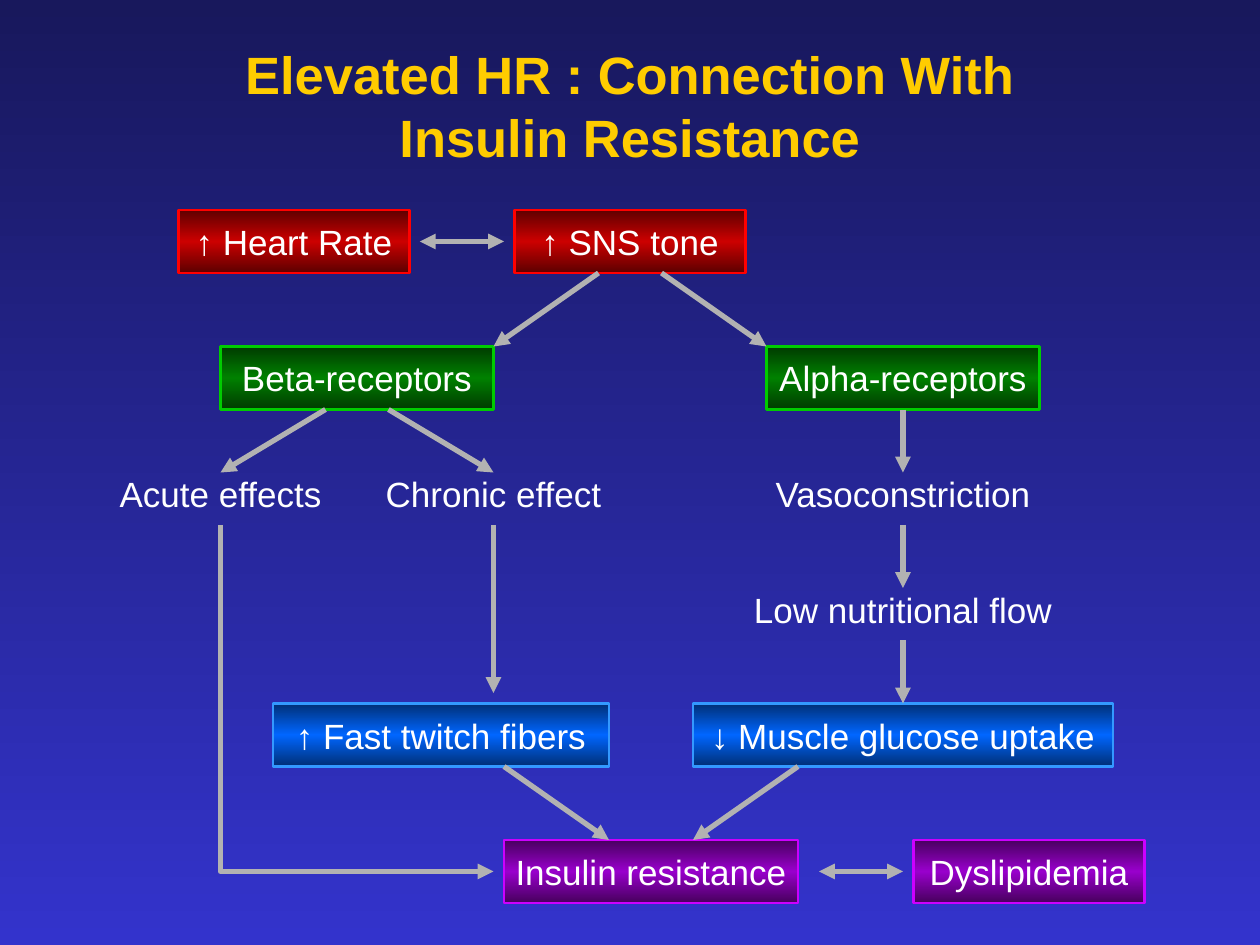
from copy import deepcopy
from typing import NamedTuple, Optional

from lxml import etree
from pptx import Presentation
from pptx import util as u
from pptx.dml.color import RGBColor
from pptx.enum import shapes, text
from pptx.oxml.ns import qn

UNIT_CM = 2.54 / 12

WHITE = RGBColor(0xFF, 0xFF, 0xFF)
BLACK = RGBColor(0x00, 0x00, 0x00)
GOLD = RGBColor(0xFF, 0xCC, 0x00)
GREY = RGBColor(0xB2, 0xB2, 0xB2)
NIGHT = RGBColor(0x18, 0x18, 0x5C)
INDIGO = RGBColor(0x33, 0x33, 0xCC)


class Palette(NamedTuple):
    edge: RGBColor
    middle: RGBColor
    border: RGBColor


RED = Palette(RGBColor(0x5E, 0x00, 0x00), RGBColor(0xCC, 0x00, 0x00), RGBColor(0xFF, 0x00, 0x00))
GREEN = Palette(RGBColor(0x00, 0x3B, 0x00), RGBColor(0x00, 0x80, 0x00), RGBColor(0x00, 0xCC, 0x00))
BLUE = Palette(RGBColor(0x00, 0x2F, 0x76), RGBColor(0x00, 0x66, 0xFF), RGBColor(0x33, 0x99, 0xFF))
PURPLE = Palette(RGBColor(0x47, 0x00, 0x5E), RGBColor(0x99, 0x00, 0xCC), RGBColor(0xCC, 0x00, 0xFF))


class Node(NamedTuple):
    label: str
    left: int
    top: int
    width: int
    height: int = 6
    palette: Optional[Palette] = None


class Arrow(NamedTuple):
    start: tuple
    end: tuple
    two_way: bool = False


NODES = [
    Node("↑ Heart Rate", 17, 20, 22, palette=RED),
    Node("↑ SNS tone", 49, 20, 22, palette=RED),
    Node("Beta-receptors", 21, 33, 26, palette=GREEN),
    Node("Alpha-receptors", 73, 33, 26, palette=GREEN),
    Node("Acute effects", 10, 45, 22, 4),
    Node("Chronic effect", 36, 45, 22, 4),
    Node("Vasoconstriction", 73, 45, 26, 4),
    Node("Low nutritional flow", 73, 56, 26, 4),
    Node("↑ Fast twitch fibers", 26, 67, 32, palette=BLUE),
    Node("↓ Muscle glucose uptake", 66, 67, 40, palette=BLUE),
    Node("Insulin resistance", 48, 80, 28, palette=PURPLE),
    Node("Dyslipidemia", 87, 80, 22, palette=PURPLE),
]

ARROWS = [
    Arrow((40, 23), (48, 23), two_way=True),
    Arrow((57, 26), (47, 33)),
    Arrow((63, 26), (73, 33)),
    Arrow((86, 39), (86, 45)),
    Arrow((86, 50), (86, 56)),
    Arrow((86, 61), (86, 67)),
    Arrow((48, 73), (58, 80)),
    Arrow((76, 73), (66, 80)),
    Arrow((78, 83), (86, 83), two_way=True),
    Arrow((47, 50), (47, 66)),
    Arrow((31, 39), (21, 45)),
    Arrow((37, 39), (47, 45)),
]

ACUTE_PATH = [(21, 50), (21, 83), (47, 83)]

TITLE_FONT = {"name": "Arial", "size": u.Pt(30), "bold": True}
LABEL_FONT = {"name": "Arial", "size": u.Pt(20), "bold": False}
TITLE_FRAME = {
    "word_wrap": True,
    "auto_size": text.MSO_AUTO_SIZE.NONE,
    "vertical_anchor": text.MSO_ANCHOR.MIDDLE,
}
LABEL_FRAME = {**TITLE_FRAME, "word_wrap": False}


def grid(*units: int) -> list:
    return [u.Cm(unit * UNIT_CM) for unit in units]


def apply(target, values: dict) -> None:
    for name, value in values.items():
        setattr(target, name, value)


def set_text(shape, words: str, frame: dict, font: dict, color: RGBColor):
    apply(shape.text_frame, frame)
    paragraph = shape.text_frame.paragraphs[0]
    paragraph.alignment = text.PP_ALIGN.CENTER
    run = paragraph.add_run()
    run.text = words
    apply(run.font, font)
    run.font.color.rgb = color
    return run


def set_gradient(fill, element, colors: list) -> None:
    fill.gradient()
    fill.gradient_angle = 270
    stop_list = next(element.iter(qn("a:gsLst")))
    while len(stop_list) < len(colors):
        stop_list.append(deepcopy(stop_list[0]))
    for index, (stop, color) in enumerate(zip(fill.gradient_stops, colors)):
        stop.color.rgb = color
        stop.position = index / (len(colors) - 1)


def style_arrow(shape, two_way: bool = False) -> None:
    shape.line.width = u.Pt(3)
    shape.line.color.rgb = GREY
    line = shape.element.spPr.find(qn("a:ln"))
    for end in ["a:headEnd", "a:tailEnd"] if two_way else ["a:tailEnd"]:
        etree.SubElement(line, qn(end), type="triangle")


def add_title(slide, words: str) -> None:
    title = slide.shapes.title
    title.left, title.top, title.width, title.height = grid(17, 3, 86, 14)
    run = set_text(title, words, TITLE_FRAME, TITLE_FONT, GOLD)
    effects = etree.Element(qn("a:effectLst"))
    shadow = etree.SubElement(effects, qn("a:outerShdw"), dist="38100", dir="2700000")
    etree.SubElement(shadow, qn("a:srgbClr"), val=str(BLACK))
    run.font.fill
    run._r.get_or_add_rPr().find(qn("a:solidFill")).addnext(effects)


def add_node(slide, node: Node) -> None:
    place = grid(node.left, node.top, node.width, node.height)
    if node.palette:
        shape = slide.shapes.add_shape(shapes.MSO_SHAPE.RECTANGLE, *place)
        shape.shadow.inherit = False
        edge, middle, border = node.palette
        set_gradient(shape.fill, shape.element, [edge, middle, edge])
        shape.line.color.rgb = border
        shape.line.width = u.Pt(1.5)
    else:
        shape = slide.shapes.add_textbox(*place)
    set_text(shape, node.label, LABEL_FRAME, LABEL_FONT, WHITE)


def add_arrow(slide, arrow: Arrow) -> None:
    connector = slide.shapes.add_connector(
        shapes.MSO_CONNECTOR.STRAIGHT, *grid(*arrow.start, *arrow.end)
    )
    style_arrow(connector, arrow.two_way)
    etree.SubElement(connector.element.spPr, qn("a:effectLst"))


def add_bent_arrow(slide, points: list) -> None:
    first, *rest = [grid(*point) for point in points]
    builder = slide.shapes.build_freeform(*first)
    builder.add_line_segments(rest, close=False)
    shape = builder.convert_to_shape()
    shape.shadow.inherit = False
    shape.fill.background()
    style_arrow(shape)


def main() -> None:
    presentation = Presentation()
    presentation.slide_width, presentation.slide_height = grid(120, 90)
    slide = presentation.slides.add_slide(presentation.slide_layouts[5])
    set_gradient(slide.background.fill, slide.element, [NIGHT, INDIGO])
    add_title(slide, "Elevated HR : Connection With Insulin Resistance")
    for node in NODES:
        add_node(slide, node)
    for arrow in ARROWS:
        add_arrow(slide, arrow)
    add_bent_arrow(slide, ACUTE_PATH)
    presentation.save("out.pptx")


if __name__ == "__main__":
    main()
